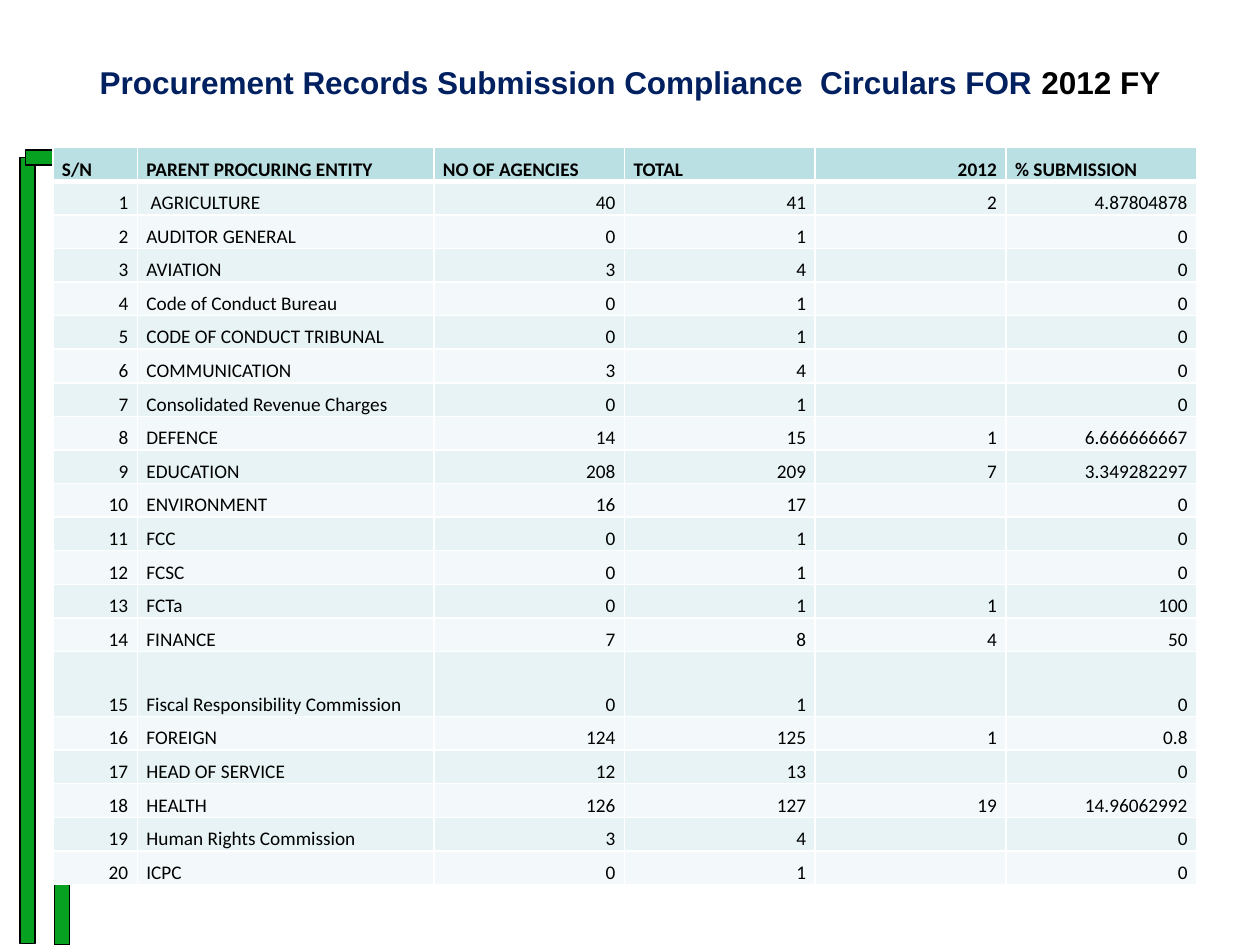
from dataclasses import dataclass
from typing import NamedTuple, Optional

from pptx import Presentation
from pptx.dml.color import RGBColor
from pptx.enum.shapes import MSO_SHAPE
from pptx.enum.text import MSO_ANCHOR, PP_ALIGN
from pptx.oxml.xmlchemy import OxmlElement
from pptx.util import Pt


@dataclass(frozen=True)
class Theme:
    navy: str = "002060"
    black: str = "000000"
    white: str = "FFFFFF"
    green: str = "07A121"
    head: str = "BBE0E3"
    odd: str = "E7F3F4"
    even: str = "F3F9FA"
    title_font: str = "Arial"
    cell_font: str = "Calibri"
    title_size: float = 18
    cell_size: float = 11


class Bar(NamedTuple):
    left: float
    top: float
    width: float
    height: float


class Entry(NamedTuple):
    name: str
    units: int
    sent: Optional[int] = None

    def cells(self, rank: int) -> list[str]:
        total = self.units + 1
        sent = self.sent or 0
        share = f"{100 * sent / total:.10g}"
        return [str(rank), self.name, str(self.units), str(total),
                str(sent) if sent else "", share]


THEME = Theme()
BARS = [
    Bar(11.5, 90, 8.6, 449.3),
    Bar(31, 90.7, 8.6, 449.3),
    Bar(14.4, 85.7, 668.9, 8.6),
]
HEADS = ["S/N", "PARENT PROCURING ENTITY", "NO OF AGENCIES", "TOTAL",
         "2012", "% SUBMISSION"]
ENTRIES = [
    Entry(" AGRICULTURE", 40, 2),
    Entry("AUDITOR GENERAL", 0),
    Entry("AVIATION", 3),
    Entry("Code of Conduct Bureau", 0),
    Entry("CODE OF CONDUCT TRIBUNAL", 0),
    Entry("COMMUNICATION", 3),
    Entry("Consolidated Revenue Charges", 0),
    Entry("DEFENCE", 14, 1),
    Entry("EDUCATION", 208, 7),
    Entry("ENVIRONMENT", 16),
    Entry("FCC", 0),
    Entry("FCSC", 0),
    Entry("FCTa", 0, 1),
    Entry("FINANCE", 7, 4),
    Entry("Fiscal Responsibility Commission", 0),
    Entry("FOREIGN", 124, 1),
    Entry("HEAD OF SERVICE", 12),
    Entry("HEALTH", 126, 19),
    Entry("Human Rights Commission", 3),
    Entry("ICPC", 0),
]
WIDTHS = [48.3, 169.4] + [109] * 4
ROW, TALL, TALL_ROW = 19.2, 37.2, 15
NAME_COL, YEAR_COL = 1, 4


def style(run, font: str, size: float, color: str, bold: bool) -> None:
    run.font.name = font
    run.font.size = Pt(size)
    run.font.bold = bold
    run.font.color.rgb = RGBColor.from_string(color)


def draw_bar(slide, bar: Bar) -> None:
    shape = slide.shapes.add_shape(MSO_SHAPE.RECTANGLE, *map(Pt, bar))
    shape.shadow.inherit = False
    shape.fill.solid()
    shape.fill.fore_color.rgb = RGBColor.from_string(THEME.green)
    shape.line.color.rgb = RGBColor.from_string(THEME.black)
    shape.line.width = Pt(0.75)


def draw_title(slide) -> None:
    title = slide.shapes.title
    title.left, title.top = Pt(36), Pt(21.6)
    title.width, title.height = Pt(648), Pt(50.4)
    frame = title.text_frame
    frame.vertical_anchor = MSO_ANCHOR.MIDDLE
    frame.text = "Procurement Records Submission Compliance  Circulars FOR "
    line = frame.paragraphs[0]
    line.alignment = PP_ALIGN.CENTER
    line.add_run().text = "2012 FY"
    for run, color in zip(line.runs, (THEME.navy, THEME.black)):
        style(run, THEME.title_font, THEME.title_size, color, True)


def set_edge(cell, side: str, width: float) -> None:
    edge = OxmlElement(f"a:ln{side}")
    edge.set("w", str(Pt(width)))
    fill = OxmlElement("a:solidFill")
    color = OxmlElement("a:srgbClr")
    color.set("val", THEME.white)
    fill.append(color)
    edge.append(fill)
    cell._tc.get_or_add_tcPr().append(edge)


def fill_cell(cell, text: str, row: int, col: int) -> None:
    head = row == 0
    for side in "LRTB":
        thick = (row, side) in ((0, "B"), (1, "T"))
        set_edge(cell, side, 3 if thick else 1)
    tint = THEME.head if head else THEME.odd if row % 2 else THEME.even
    cell.fill.solid()
    cell.fill.fore_color.rgb = RGBColor.from_string(tint)
    cell.vertical_anchor = MSO_ANCHOR.BOTTOM
    cell.margin_left = cell.margin_right = Pt(5.2)
    cell.margin_top = cell.margin_bottom = 0
    line = cell.text_frame.paragraphs[0]
    line.line_spacing = 1.15
    right = col == YEAR_COL if head else col != NAME_COL
    line.alignment = PP_ALIGN.RIGHT if right else PP_ALIGN.LEFT
    if text:
        line.text = text
        style(line.runs[0], THEME.cell_font, THEME.cell_size, THEME.black, head)
    else:
        mark = OxmlElement("a:endParaRPr")
        mark.set("sz", str(int(THEME.cell_size * 100)))
        line._p.append(mark)


def draw_table(slide) -> None:
    rows = [HEADS] + [item.cells(rank) for rank, item in enumerate(ENTRIES, 1)]
    sizes = [TALL if row == TALL_ROW else ROW for row in range(len(rows))]
    table = slide.shapes.add_table(
        len(rows), len(HEADS), Pt(30.2), Pt(84.4),
        Pt(sum(WIDTHS)), Pt(sum(sizes))).table
    table.horz_banding = False
    for col, width in zip(table.columns, WIDTHS):
        col.width = Pt(width)
    for row, size in zip(table.rows, sizes):
        row.height = Pt(size)
    for row, texts in enumerate(rows):
        for col, text in enumerate(texts):
            fill_cell(table.cell(row, col), text, row, col)


def main() -> None:
    deck = Presentation()
    deck.slide_width, deck.slide_height = Pt(720), Pt(540)
    slide = deck.slides.add_slide(deck.slide_layouts[5])
    for bar in BARS:
        draw_bar(slide, bar)
    draw_title(slide)
    draw_table(slide)
    deck.save("out.pptx")


if __name__ == "__main__":
    main()
